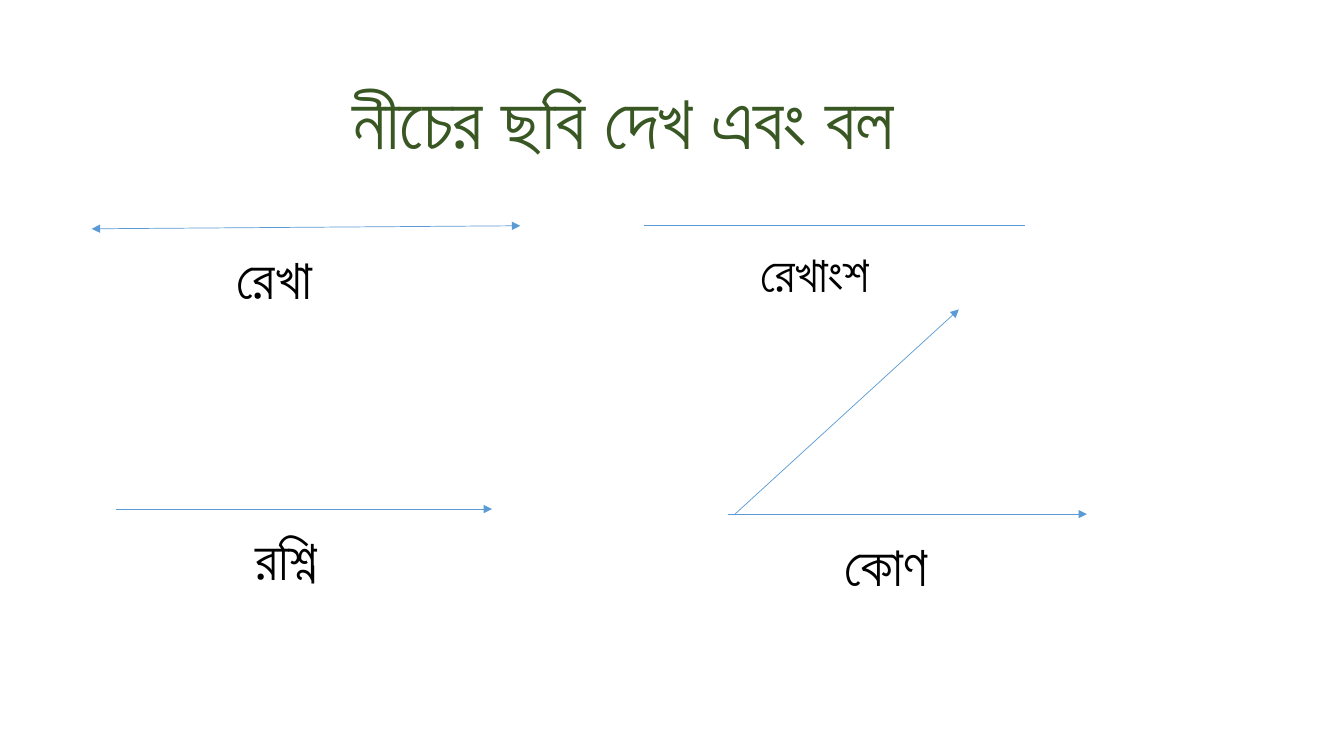
from pptx import Presentation
from pptx import util as u
from pptx.dml.color import RGBColor
from pptx.enum import shapes, text
from pptx.oxml.ns import qn
from lxml import etree


def color(code):
    return RGBColor.from_string(code)


class Board:
    """Style and current slide."""
    font = "Calibri"
    blue, green, black = "5B9BD5", "385723", "000000"

    def __init__(self, deck):
        self.slide = deck.slides.add_slide(deck.slide_layouts[5])

    def put(self, box, words, size, ink, align):
        frame = box.text_frame
        frame.word_wrap = True
        frame.auto_size = text.MSO_AUTO_SIZE.SHAPE_TO_FIT_TEXT
        frame.vertical_anchor = text.MSO_ANCHOR.TOP
        para = frame.paragraphs[0]
        para.text = words
        para.alignment = align
        para.font.name = self.font
        para.font.size = u.Pt(size)
        para.font.color.rgb = color(ink)

    def title(self, words, area):
        box = self.slide.shapes.title
        box.left, box.top, box.width, box.height = map(u.Inches, area)
        self.put(box, words, 54, self.green, text.PP_ALIGN.CENTER)

    def label(self, words, area, size=40):
        box = self.slide.shapes.add_textbox(*map(u.Inches, area))
        self.put(box, words, size, self.black, text.PP_ALIGN.LEFT)

    def line(self, start, end, ends=(), group=None):
        host = group.shapes if group else self.slide.shapes
        line = host.add_connector(shapes.MSO_CONNECTOR.STRAIGHT,
                                  *map(u.Inches, start + end))
        line.line.color.rgb = color(self.blue)
        line.line.width = u.Pt(0.5)
        props = line.element.spPr
        for tag in ends:
            etree.SubElement(props.find(qn("a:ln")), qn(tag), type="triangle")
        etree.SubElement(props, qn("a:effectLst"))

    def group(self):
        return self.slide.shapes.add_group_shape()


def main():
    deck = Presentation()
    deck.slide_width, deck.slide_height = u.Inches(13.33), u.Inches(7.5)
    board = Board(deck)
    head, tail = "a:headEnd", "a:tailEnd"

    board.title("নীচের ছবি দেখ এবং বল", (2.85, 0.68, 6.66, 1.01))

    # Line, segment and ray
    board.line((0.91, 2.27), (5.16, 2.24), (head, tail))
    board.line((6.39, 2.24), (10.17, 2.24))
    board.line((1.15, 5.05), (4.88, 5.05), (tail,))

    # Angle made of two rays
    angle = board.group()
    board.line((7.22, 5.1), (10.78, 5.1), (tail,), angle)
    board.line((7.29, 5.1), (9.51, 3.07), (tail,), angle)

    # Names under the figures
    board.label("রেখা", (2.25, 2.37, 1.54, 0.77))
    board.label("রেখাংশ", (7.44, 2.35, 1.51, 0.71), 36)
    board.label("রশ্নি", (2.44, 5.15, 1.49, 0.77))
    board.label("কোণ", (8.28, 5.21, 1.42, 0.77))

    deck.save("out.pptx")


if __name__ == "__main__":
    main()
